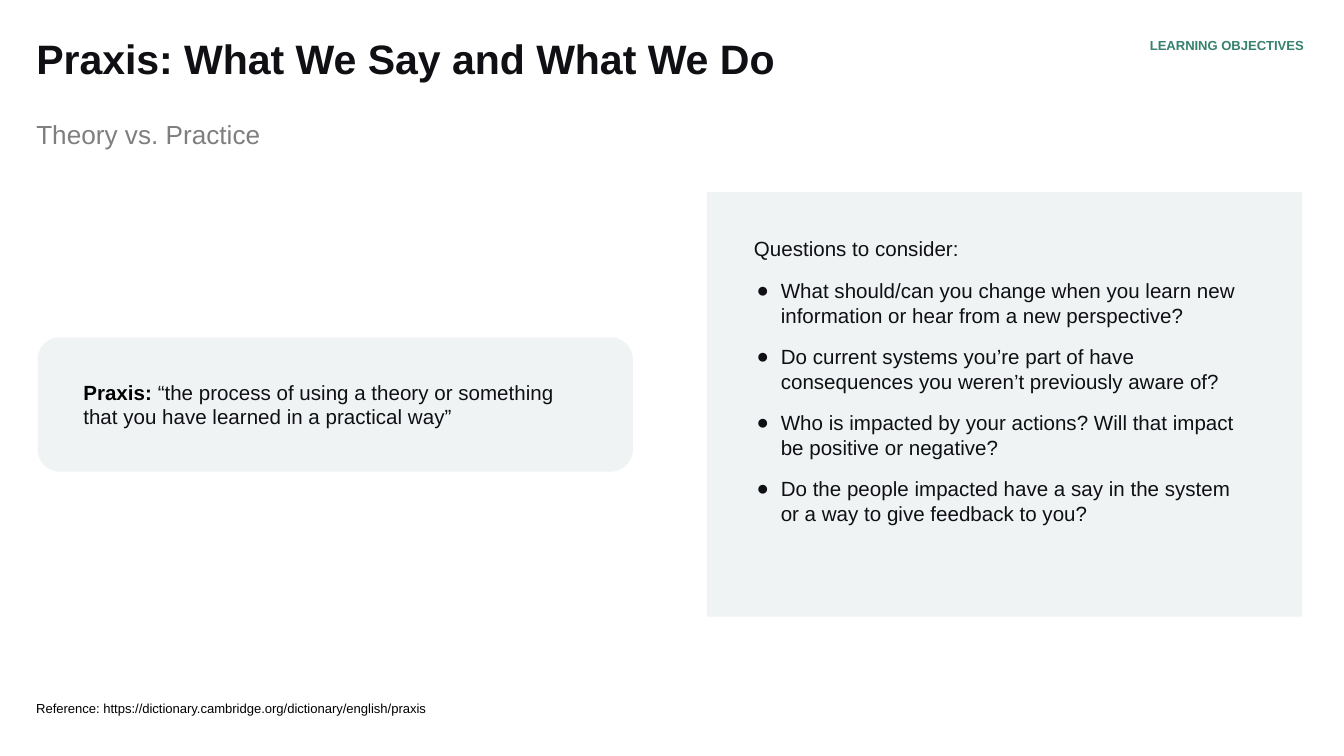
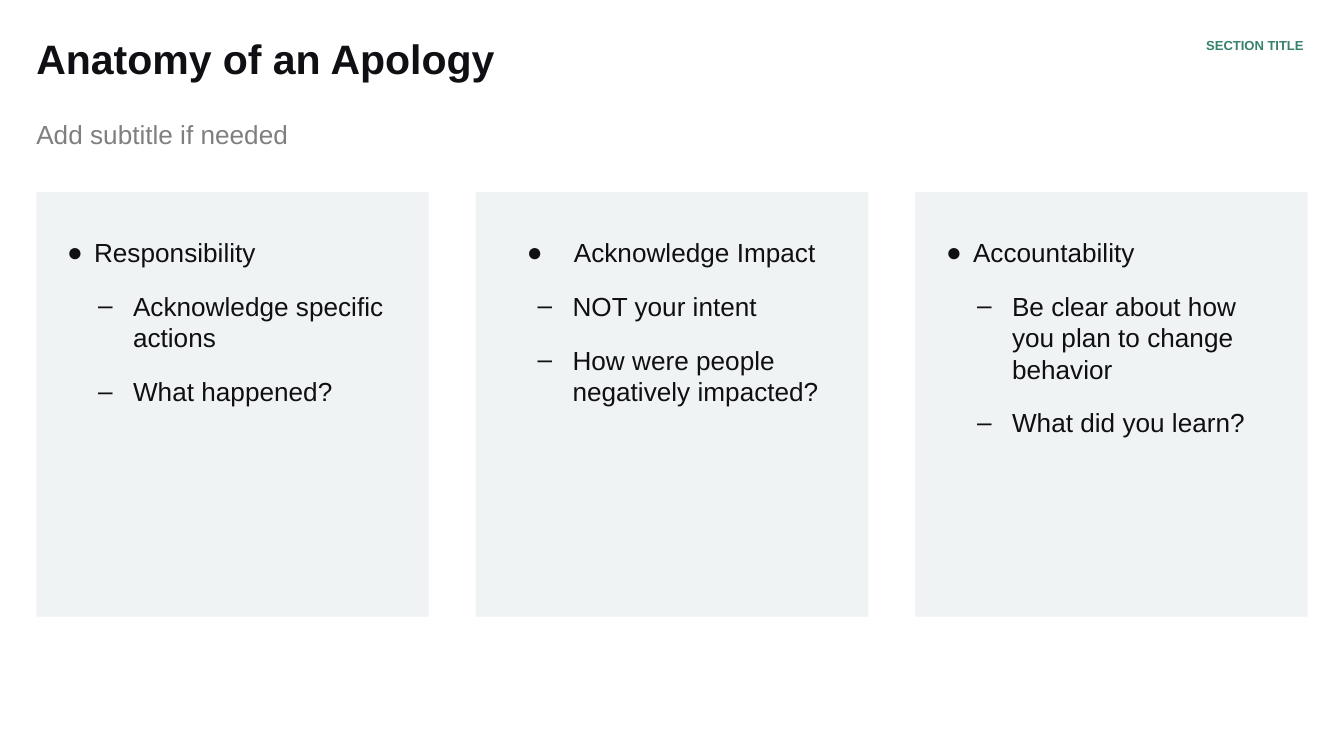
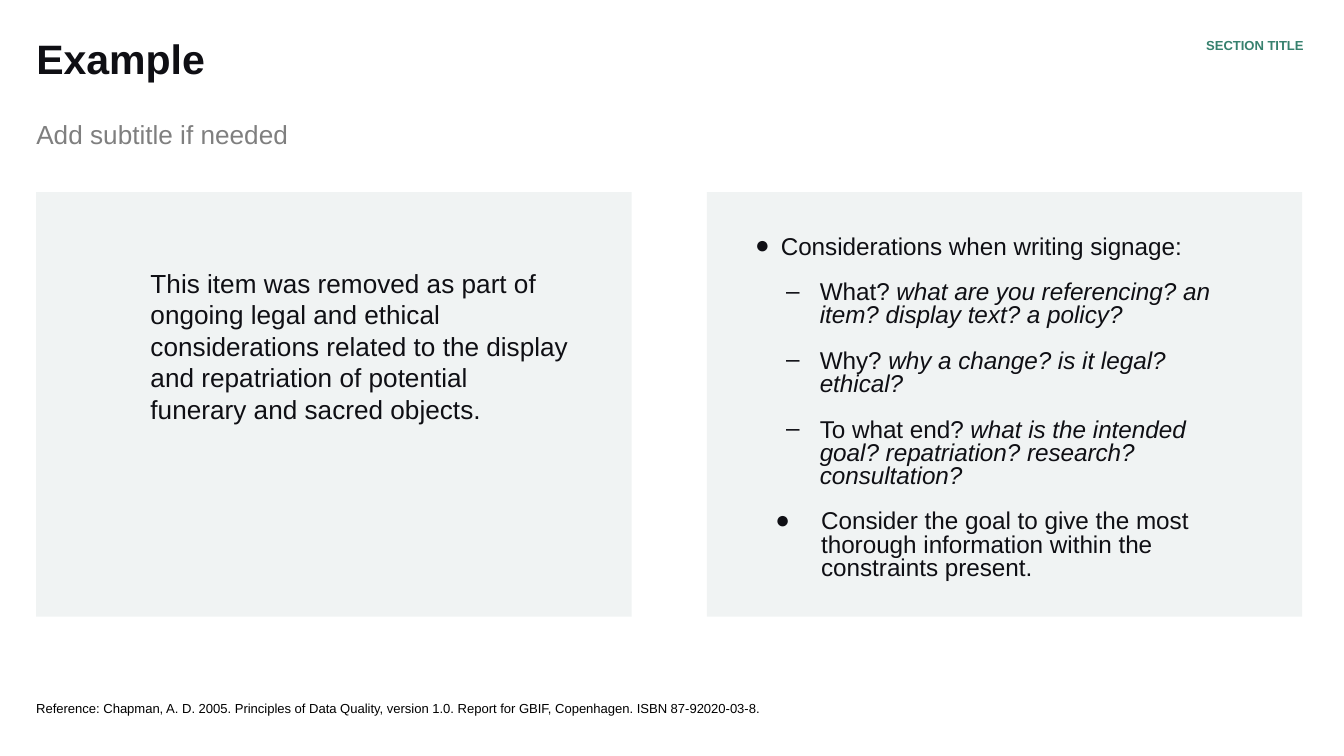
from dataclasses import dataclass, replace

from lxml.etree import SubElement
from pptx import Presentation
from pptx.dml.color import RGBColor
from pptx.enum.shapes import MSO_SHAPE as Preset
from pptx.enum.text import MSO_ANCHOR as Anchor, PP_ALIGN as Align
from pptx.oxml.ns import qn
from pptx.slide import Slide
from pptx.util import Inches, Pt

FONT = "Arial"
INK, BLACK, GREY, GREEN, PANEL = "0F0F14", "000000", "7F7F7F", "37816E", "F0F3F3"
SLIDE_WIDTH = 10
SLIDE_HEIGHT = SLIDE_WIDTH * 9 / 16
MARGIN = 0.27
PANEL_TOP, PANEL_HEIGHT = 1.43, 3.16
TEXT_TOP, TEXT_HEIGHT = 1.66, 2.56


@dataclass(frozen=True)
class Box:
    left: float
    top: float
    width: float
    height: float


@dataclass(frozen=True)
class Style:
    size: float
    color: str = INK
    bold: bool = False
    align: Align = Align.LEFT
    line_spacing: float | None = None
    space_before: float = 0
    bullet: str = ""
    indent: float = 0
    hanging: float = 0
    level: int = 0


@dataclass(frozen=True)
class Run:
    text: str
    bold: bool | None = None
    italic: bool | None = None
    color: str | None = None


@dataclass(frozen=True)
class Line:
    style: Style
    runs: tuple[Run, ...]


@dataclass(frozen=True)
class Columns:
    """Equal panels in a row, each with text inset from both sides."""
    pitch: float
    width: float
    padding: float

    def panel(self, index: int) -> Box:
        return Box(MARGIN + index * self.pitch, PANEL_TOP, self.width, PANEL_HEIGHT)

    def text(self, index: int, height: float = TEXT_HEIGHT) -> Box:
        left = self.panel(index).left + self.padding
        return Box(left, TEXT_TOP, self.width - 2 * self.padding, height)


HALVES = Columns(pitch=4.99, width=4.43, padding=0.35)
THIRDS = Columns(pitch=3.27, width=2.92, padding=0.23)

# Text styles
TITLE = Style(22, bold=True, line_spacing=0.9)
SUBTITLE = Style(14, GREY)
SECTION = Style(7, GREEN, bold=True, align=Align.RIGHT, line_spacing=0.9)
REFERENCE = Style(7, BLACK)
BODY = Style(11)
QUESTION = Style(11, space_before=9, bullet="●", indent=0.2, hanging=0.18)
TOPIC = Style(14, bullet="●", indent=0.2, hanging=0.2)
WIDE_TOPIC = replace(TOPIC, indent=0.5, hanging=0.35)
DETAIL = Style(14, space_before=12, bullet="–", indent=0.49, hanging=0.26, level=1)
STATEMENT = Style(14, indent=0.5)
TIGHT_TOPIC = replace(TOPIC, size=12.95, hanging=0.19, line_spacing=0.8)
TIGHT_DETAIL = replace(DETAIL, size=12.95, hanging=0.25, line_spacing=0.8)
TIGHT_CLOSING = replace(TIGHT_TOPIC, indent=0.5, hanging=0.34, space_before=12)


def rgb(color: str) -> RGBColor:
    return RGBColor.from_string(color)


def place(box: Box) -> tuple[Inches, Inches, Inches, Inches]:
    return Inches(box.left), Inches(box.top), Inches(box.width), Inches(box.height)


def line(style: Style, *runs: str | Run) -> Line:
    return Line(style, tuple(Run(run) if isinstance(run, str) else run for run in runs))


def add_panel(slide: Slide, box: Box, preset: Preset = Preset.RECTANGLE) -> None:
    shape = slide.shapes.add_shape(preset, *place(box))
    shape.shadow.inherit = False
    shape.fill.solid()
    shape.fill.fore_color.rgb = rgb(PANEL)
    shape.line.fill.background()


def format_paragraph(paragraph, style: Style) -> None:
    properties = paragraph._p.get_or_add_pPr()
    properties.set("marL", str(Inches(style.indent)))
    properties.set("indent", str(-Inches(style.hanging)))
    if style.bullet:
        color = SubElement(properties, qn("a:buClr"))
        SubElement(color, qn("a:srgbClr"), val=style.color)
        SubElement(properties, qn("a:buFont"), typeface=FONT)
        SubElement(properties, qn("a:buChar"), char=style.bullet)
    paragraph.level = style.level
    paragraph.alignment = style.align
    paragraph.space_before = Pt(style.space_before)
    if style.line_spacing:
        paragraph.line_spacing = style.line_spacing
    font = paragraph.font
    font.name, font.size, font.bold = FONT, Pt(style.size), style.bold
    font.color.rgb = rgb(style.color)


def add_text(slide: Slide, box: Box, lines: list[Line], top: float = 0.1,
             right: float = 0.1, bottom: float = 0.1, anchor: Anchor = Anchor.TOP) -> None:
    frame = slide.shapes.add_textbox(*place(box)).text_frame
    frame.word_wrap = True
    frame.vertical_anchor = anchor
    frame.margin_left, frame.margin_top = 0, Inches(top)
    frame.margin_right, frame.margin_bottom = Inches(right), Inches(bottom)
    for index, item in enumerate(lines):
        paragraph = frame.add_paragraph() if index else frame.paragraphs[0]
        format_paragraph(paragraph, item.style)
        for part in item.runs:
            run = paragraph.add_run()
            run.text = part.text
            if part.bold is not None:
                run.font.bold = part.bold
            if part.italic is not None:
                run.font.italic = part.italic
            if part.color:
                run.font.color.rgb = rgb(part.color)


def add_slide(presentation, title: str, subtitle: str, section: str,
              reference: str = "") -> Slide:
    """Start a slide with the shared header and optional reference footer."""
    slide = presentation.slides.add_slide(presentation.slide_layouts[6])
    add_text(slide, Box(MARGIN, 0.29, 7.99, 0.59), [line(TITLE, title)], top=0)
    add_text(slide, Box(MARGIN, 0.88, 7.09, 0.47), [line(SUBTITLE, subtitle)], top=0)
    add_text(slide, Box(7.57, 0.29, 2.13, 0.16), [line(SECTION, section)], top=0, right=0)
    if reference:
        add_text(slide, Box(MARGIN, 4.9, 8.4, 0.43), [line(REFERENCE, reference)],
                 top=0, bottom=0, anchor=Anchor.BOTTOM)
    return slide


def build_praxis(presentation) -> None:
    slide = add_slide(
        presentation, "Praxis: What We Say and What We Do", "Theory vs. Practice",
        "LEARNING OBJECTIVES",
        "Reference: https://dictionary.cambridge.org/dictionary/english/praxis")
    # Definition
    add_panel(slide, Box(0.28, 2.51, 4.43, 1), Preset.ROUNDED_RECTANGLE)
    definition = line(
        BODY, Run("Praxis: ", bold=True, color=BLACK),
        "“the process of using a theory or something that you have learned in a practical way”")
    add_text(slide, Box(0.62, 2.51, 3.72, 1), [definition], anchor=Anchor.MIDDLE)
    # Questions
    questions = [
        "What should/can you change when you learn new information or hear from a new perspective?",
        "Do current systems you’re part of have consequences you weren’t previously aware of?",
        "Who is impacted by your actions? Will that impact be positive or negative?",
        "Do the people impacted have a say in the system or a way to give feedback to you?",
    ]
    add_panel(slide, HALVES.panel(1))
    add_text(slide, HALVES.text(1), [line(BODY, "Questions to consider:")]
             + [line(QUESTION, question) for question in questions])


def build_apology(presentation) -> None:
    slide = add_slide(presentation, "Anatomy of an Apology", "Add subtitle if needed",
                      "SECTION TITLE")
    parts = [
        (TOPIC, "Responsibility", ["Acknowledge specific actions", "What happened?"]),
        (WIDE_TOPIC, "Acknowledge Impact",
         ["NOT your intent", "How were people negatively impacted?"]),
        (TOPIC, "Accountability",
         ["Be clear about how you plan to change behavior", "What did you learn?"]),
    ]
    for index, (style, topic, details) in enumerate(parts):
        add_panel(slide, THIRDS.panel(index))
        add_text(slide, THIRDS.text(index),
                 [line(style, topic)] + [line(DETAIL, detail) for detail in details])


def build_example(presentation) -> None:
    slide = add_slide(
        presentation, "Example", "Add subtitle if needed", "SECTION TITLE",
        "Reference: Chapman, A. D. 2005. Principles of Data Quality, version 1.0. "
        "Report for GBIF, Copenhagen. ISBN 87-92020-03-8.")
    # Sample sign
    add_panel(slide, HALVES.panel(0))
    statement = line(
        STATEMENT,
        "This item was removed as part of ongoing legal and ethical considerations related "
        "to the display and repatriation of potential funerary and sacred objects.")
    add_text(slide, HALVES.text(0), [statement], top=0.33)
    # Considerations
    prompts = [
        ("What? ", "what are you referencing? an item? display text? a policy?"),
        ("Why? ", "why a change? is it legal? ethical?"),
        ("To what end? ", "what is the intended goal? repatriation? research? consultation?"),
    ]
    add_panel(slide, HALVES.panel(1))
    add_text(slide, HALVES.text(1, height=2.8), [
        line(TIGHT_TOPIC, "Considerations when writing signage:"),
        *(line(TIGHT_DETAIL, prompt, Run(hint, italic=True)) for prompt, hint in prompts),
        line(TIGHT_CLOSING, "Consider the goal to give the most thorough information "
                            "within the constraints present."),
    ])


def main() -> None:
    presentation = Presentation()
    presentation.slide_width = Inches(SLIDE_WIDTH)
    presentation.slide_height = Inches(SLIDE_HEIGHT)
    build_praxis(presentation)
    build_apology(presentation)
    build_example(presentation)
    presentation.save("out.pptx")


if __name__ == "__main__":
    main()
